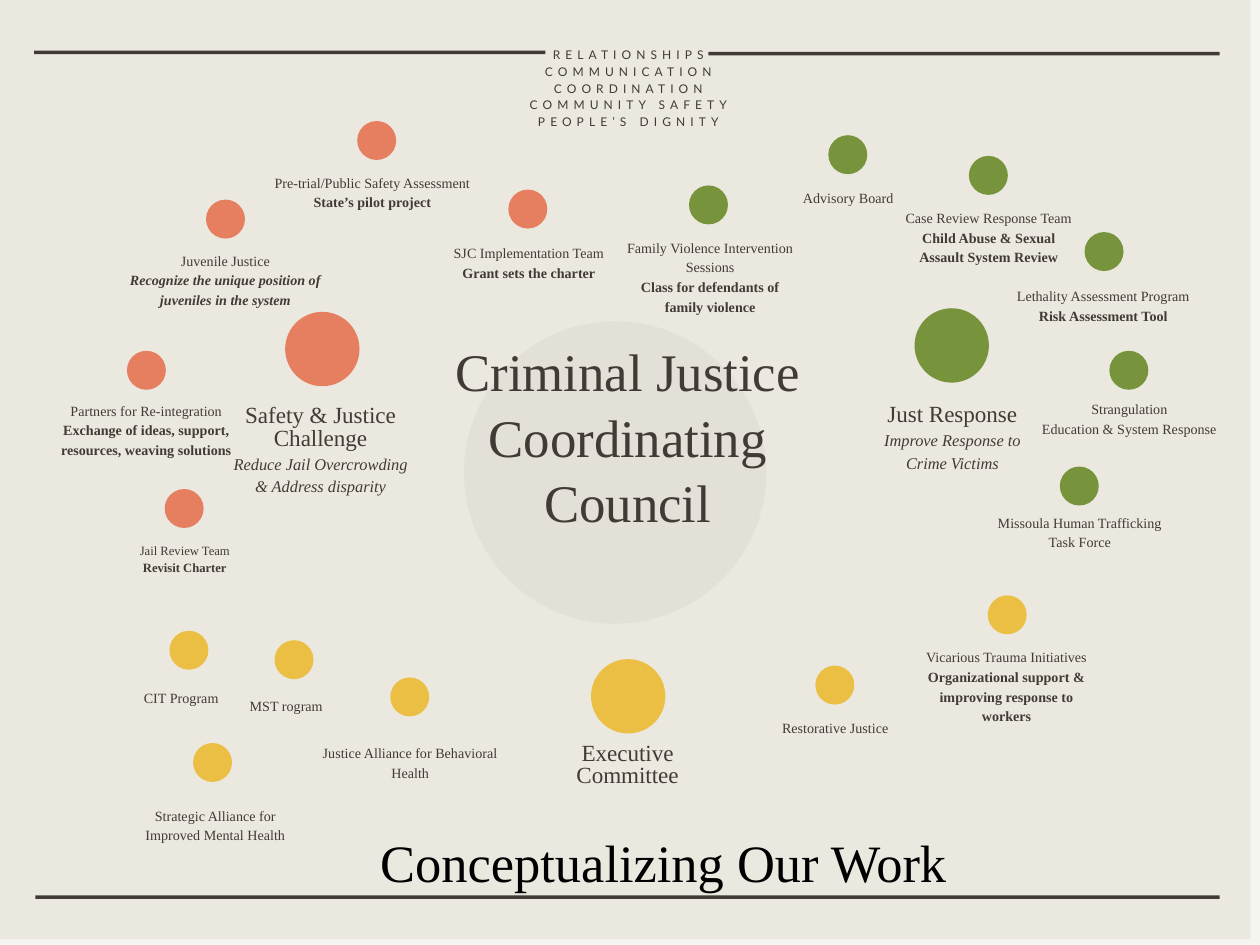
from pptx import Presentation
from pptx.dml.color import RGBColor
from pptx.enum.shapes import MSO_SHAPE
from pptx.enum.text import MSO_ANCHOR, MSO_AUTO_SIZE, PP_ALIGN
from pptx.util import Inches, Pt

PAPER = RGBColor(0xEB, 0xE8, 0xDF)
EDGE = RGBColor(0xF4, 0xF4, 0xF0)
DISC = RGBColor(0xE3, 0xE0, 0xD7)
INK = RGBColor(0x40, 0x3C, 0x35)
BLACK = RGBColor(0, 0, 0)
CORAL = RGBColor(0xE5, 0x7F, 0x60)
GREEN = RGBColor(0x77, 0x93, 0x3C)
GOLD = RGBColor(0xEB, 0xBF, 0x44)
SERIF = "Times New Roman"

prs = Presentation()
prs.slide_width, prs.slide_height = Inches(10.67), Inches(8)
slide = prs.slides.add_slide(prs.slide_layouts[5])
slide.background.fill.solid()
slide.background.fill.fore_color.rgb = PAPER


def add_fill(kind, x, y, w, h, color):
    shape = slide.shapes.add_shape(kind, Inches(x), Inches(y), Inches(w), Inches(h))
    shape.shadow.inherit = False
    shape.fill.solid()
    shape.fill.fore_color.rgb = color
    shape.line.fill.background()


def add_text(box, lines, lead, font=SERIF):
    """Each line is (text, size, style); style holds b for bold, i for italic."""
    left, top, width, height = box
    frame = slide.shapes.add_textbox(
        Inches(left), Inches(top), Inches(width), Inches(height)).text_frame
    frame.word_wrap = True
    frame.auto_size = MSO_AUTO_SIZE.SHAPE_TO_FIT_TEXT
    frame.margin_left = frame.margin_right = frame.margin_top = frame.margin_bottom = 0
    for n, (text, size, style) in enumerate(lines):
        para = frame.add_paragraph() if n else frame.paragraphs[0]
        para.text = text
        para.alignment = PP_ALIGN.CENTER
        para.line_spacing = Pt(lead)
        para.font.name, para.font.size = font, Pt(size)
        para.font.color.rgb = INK
        if "b" in style:
            para.font.bold = True
        if "i" in style:
            para.font.italic = True
    return frame


# Page and rules
add_fill(MSO_SHAPE.RECTANGLE, 0, 0, 10.67, 8, EDGE)
add_fill(MSO_SHAPE.RECTANGLE, -0.08, -0.05, 10.67, 8, PAPER)
for x, y, w in [(0.29, 0.43, 4.33), (6, 0.44, 4.33), (0.3, 7.58, 10.03)]:
    add_fill(MSO_SHAPE.RECTANGLE, x, y, w, 0.03, INK)

# Values at the top
values = ["RELATIONSHIPS", "COMMUNICATION", "COORDINATION",
          "COMMUNITY SAFETY", "PEOPLE’S DIGNITY"]
frame = add_text((4.42, 0.38, 1.8, 0.83), [(v, 7.3, "") for v in values], 10.3, "Lato")
for para in frame.paragraphs:
    for run in para.runs:
        run.font._element.set("spc", "310")

# Council in the middle
add_fill(MSO_SHAPE.OVAL, 3.93, 2.72, 2.56, 2.56, DISC)
add_text((3.42, 2.85, 3.79, 2.19),
         [("Criminal Justice Coordinating Council", 32.2, "")], 40)

# Three main bodies: dot centre, colour, text box, name, aim
hubs = [
    (2.73, 2.955, CORAL, (1.96, 3.43, 1.51, 1.17), "Safety & Justice Challenge",
     "Reduce Jail Overcrowding & Address disparity"),
    (8.06, 2.925, GREEN, (7.31, 3.42, 1.51, 0.58), "Just Response",
     "Improve Response to Crime Victims"),
    (5.32, 5.895, GOLD, (4.56, 6.29, 1.51, 0.4), "Executive Committee", ""),
]
for x, y, color, box, name, aim in hubs:
    add_fill(MSO_SHAPE.OVAL, x - 0.315, y - 0.315, 0.63, 0.63, color)
    lines = [(name, 14.1, "")]
    if aim:
        lines.append((aim, 10, "i"))
    add_text(box, lines, 13.9)

# Programs: dot centre, text box, name, note, note style
programs = {
    CORAL: [
        (1.91, 1.855, (1.06, 2.11, 1.7, 0.49), "Juvenile Justice",
         "Recognize the unique position of juveniles in the system", "bi"),
        (1.24, 3.135, (0.47, 3.38, 1.54, 0.49), "Partners for Re-integration",
         "Exchange of ideas, support, resources, weaving solutions", "b"),
        (1.56, 4.305, (0.98, 4.57, 1.17, 0.3), "Jail Review Team", "Revisit Charter", "b"),
        (4.47, 1.77, (3.63, 2.05, 1.7, 0.49), "SJC Implementation Team",
         "Grant sets the charter", "b"),
        (3.19, 1.19, (2.19, 1.45, 1.93, 0.33), "Pre-trial/Public Safety Assessment",
         "State’s pilot project", "b"),
    ],
    GREEN: [
        (8.37, 1.485, (7.61, 1.75, 1.53, 0.66), "Case Review Response Team",
         "Child Abuse & Sexual Assault System Review", "b"),
        (9.14, 4.115, (8.38, 4.33, 1.53, 0.31),
         "Missoula Human Trafficking Task Force", "", ""),
        (9.56, 3.135, (8.8, 3.37, 1.53, 0.49), "Strangulation",
         "Education & System Response", ""),
        (9.35, 2.13, (8.58, 2.41, 1.53, 0.49), "Lethality Assessment Program",
         "Risk Assessment Tool", "b"),
        (7.18, 1.31, (6.42, 1.58, 1.53, 0.15), "Advisory Board", "", ""),
        (6, 1.735, (5.25, 2, 1.53, 0.66), "Family Violence Intervention Sessions",
         "Class for defendants of family violence", "b"),
    ],
    GOLD: [
        (7.07, 5.8, (6.31, 6.07, 1.53, 0.15), "Restorative Justice", "", ""),
        (8.53, 5.205, (7.76, 5.47, 1.53, 0.83), "Vicarious Trauma Initiatives",
         "Organizational support & improving response to workers", "b"),
        (1.6, 5.505, (0.77, 5.81, 1.53, 0.16), "CIT Program", "", ""),
        (2.49, 5.585, (1.66, 5.88, 1.53, 0.16), "MST rogram", "", ""),
        (3.47, 5.9, (2.71, 6.28, 1.53, 0.33),
         "Justice Alliance for Behavioral Health", "", ""),
        (1.8, 6.455, (1.06, 6.81, 1.53, 0.33), "Strategic Alliance for",
         "Improved Mental Health", ""),
    ],
}
for color, items in programs.items():
    for x, y, box, name, note, style in items:
        add_fill(MSO_SHAPE.OVAL, x - 0.165, y - 0.165, 0.33, 0.33, color)
        size, lead = (7.7, 10.8) if name == "Jail Review Team" else (8.6, 12)
        lines = [(name, size, "")]
        if note:
            lines.append((note, size, style))
        add_text(box, lines, lead)

# Title, brought in front of the page
title = slide.shapes.title
title.left, title.top = Inches(1.12), Inches(6.98)
title.width, title.height = Inches(9), Inches(0.87)
title.text_frame.text = "Conceptualizing Our Work"
title.text_frame.vertical_anchor = MSO_ANCHOR.TOP
title.text_frame.auto_size = MSO_AUTO_SIZE.NONE
para = title.text_frame.paragraphs[0]
para.alignment = PP_ALIGN.CENTER
para.font.name, para.font.size = SERIF, Pt(32)
para.font.color.rgb = BLACK
slide.shapes._spTree.append(title._element)

prs.save("out.pptx")
